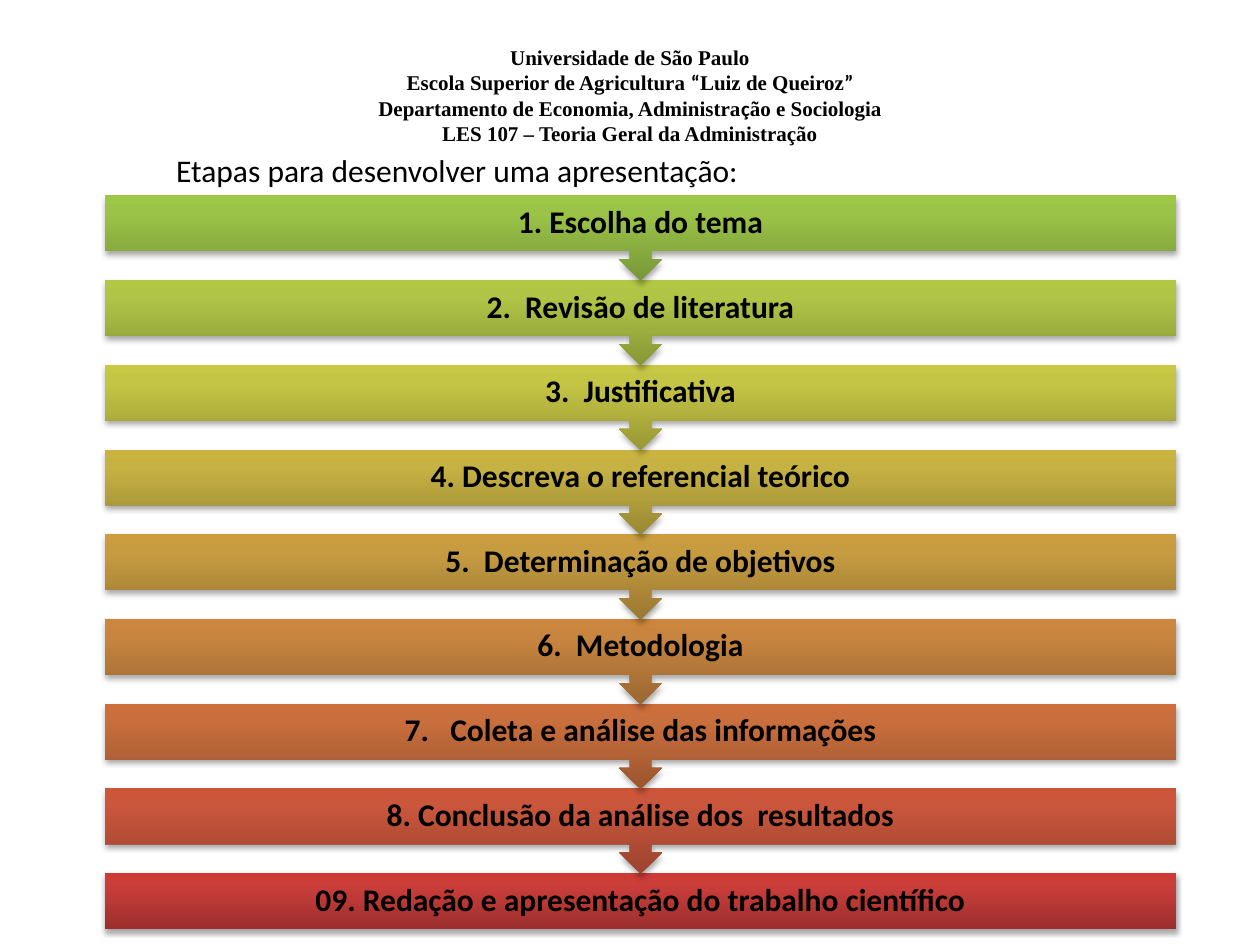
from lxml.etree import SubElement as Sub
from pptx import Presentation
from pptx.dml.color import RGBColor as Rgb
from pptx.enum.shapes import MSO_SHAPE as Shape
from pptx.enum.text import MSO_ANCHOR as Anchor, MSO_AUTO_SIZE as Auto, PP_ALIGN as Align
from pptx.oxml.ns import qn
from pptx.util import Pt

SERIF, SANS = "Times New Roman", "Calibri"
HEAD = [
    [("Universidade de São Paulo", SERIF)],
    [("Escola Superior de Agricultura ", SERIF), ("“", SANS),
     ("Luiz de Queiroz", SERIF), ("”", SANS)],
    [("Departamento de Economia, Administra", SERIF), ("ç", SANS),
     ("ão e Sociologia", SERIF)],
    [("LES 107 – Teoria Geral da Administração", SERIF)],
]
LEAD = "Etapas para desenvolver uma apresentação:"
STEPS = [
    "1. Escolha do tema",
    "2.  Revisão de literatura",
    "3.  Justificativa",
    "4. Descreva o referencial teórico",
    "5.  Determinação de objetivos",
    "6.  Metodologia",
    "7.   Coleta e análise das informações",
    "8. Conclusão da análise dos  resultados",
    "09. Redação e apresentação do trabalho científico",
]
COLORS = {
    "text": "000000",
    "shade": "000000",
    "steps": [
        ("779737", "9BC348", "9DC746"),
        ("879736", "B0C446", "B2C844"),
        ("989835", "C5C545", "C8C942"),
        ("998833", "C6B143", "CAB341"),
        ("997832", "C79C41", "CB9D3F"),
        ("9A6731", "C8853F", "CC863D"),
        ("9B552F", "C96E3D", "CD6E3B"),
        ("9B432E", "CA563C", "CD5539"),
        ("9C2F2D", "CB3E3A", "CE3B37"),
    ],
}
STOPS = (0, 80, 100)
LEFT, TOP, WIDTH = 60, 111.6, 612
PITCH, TALL, BAR = 48.42, 48.9, 31.8
BOLD = {"size": Pt(18), "bold": True}
SIDES = ("left", "top", "right", "bottom")


def put(item, vals):
    for key, val in vals.items():
        setattr(item, key, val)


def add_text(slide, box, lines, font, form, para):
    frame = slide.shapes.add_textbox(*map(Pt, box)).text_frame
    put(frame, form)
    for i, line in enumerate(lines):
        par = frame.paragraphs[0] if i == 0 else frame.add_paragraph()
        put(par, para)
        for words, face in line:
            run = par.add_run()
            run.text = words
            put(run.font, {"name": face, **font})
            run.font.color.rgb = Rgb.from_string(COLORS["text"])


def node(up, tag, **vals):
    return Sub(up, qn("a:" + tag), {k: str(v) for k, v in vals.items()})


def paint(shape, tones):
    shape.line.fill.background()
    props = shape.element.spPr
    grad = node(props, "gradFill", rotWithShape=0)
    props.find(qn("a:ln")).addprevious(grad)
    stops = node(grad, "gsLst")
    for pos, tone in zip(STOPS, tones):
        node(node(stops, "gs", pos=pos * 1000), "srgbClr", val=tone)
    node(grad, "lin", ang=270 * 60000, scaled=0)
    shade = node(node(props, "effectLst"), "outerShdw", blurRad=Pt(3.1),
                 dist=Pt(1.8), dir=90 * 60000, rotWithShape=0)
    node(node(shade, "srgbClr", val=COLORS["shade"]), "alpha", val=35000)


def add_step(slide, i):
    top, last = TOP + i * PITCH, i == len(STEPS) - 1
    kind = Shape.RECTANGLE if last else Shape.UP_ARROW_CALLOUT
    tall = BAR if last else TALL
    shape = slide.shapes.add_shape(kind, *map(Pt, (LEFT, top, WIDTH, tall)))
    shape.rotation = 0 if last else 180
    paint(shape, COLORS["steps"][i])
    form = {"word_wrap": True, "vertical_anchor": Anchor.MIDDLE}
    form.update({"margin_" + side: Pt(10) for side in SIDES})
    add_text(slide, (LEFT, top, WIDTH, BAR), [[(STEPS[i], SANS)]], BOLD, form,
             {"alignment": Align.CENTER, "line_spacing": 0.9, "space_after": Pt(6.3)})


def main():
    deck = Presentation()
    put(deck, {"slide_width": Pt(720), "slide_height": Pt(540)})
    slide = deck.slides.add_slide(deck.slide_layouts[6])
    form = {"word_wrap": False, "auto_size": Auto.SHAPE_TO_FIT_TEXT}
    add_text(slide, (207.4, 21.6, 305.2, 65.5), HEAD, {"size": Pt(12), "bold": True},
             {**form, "vertical_anchor": Anchor.MIDDLE}, {"alignment": Align.CENTER})
    for i in reversed(range(len(STEPS))):
        add_step(slide, i)
    add_text(slide, (93.6, 82.8, 339, 29), [[(LEAD, SANS)]], {"size": Pt(18)},
             form, {"alignment": Align.LEFT})
    deck.save("out.pptx")


if __name__ == "__main__":
    main()
